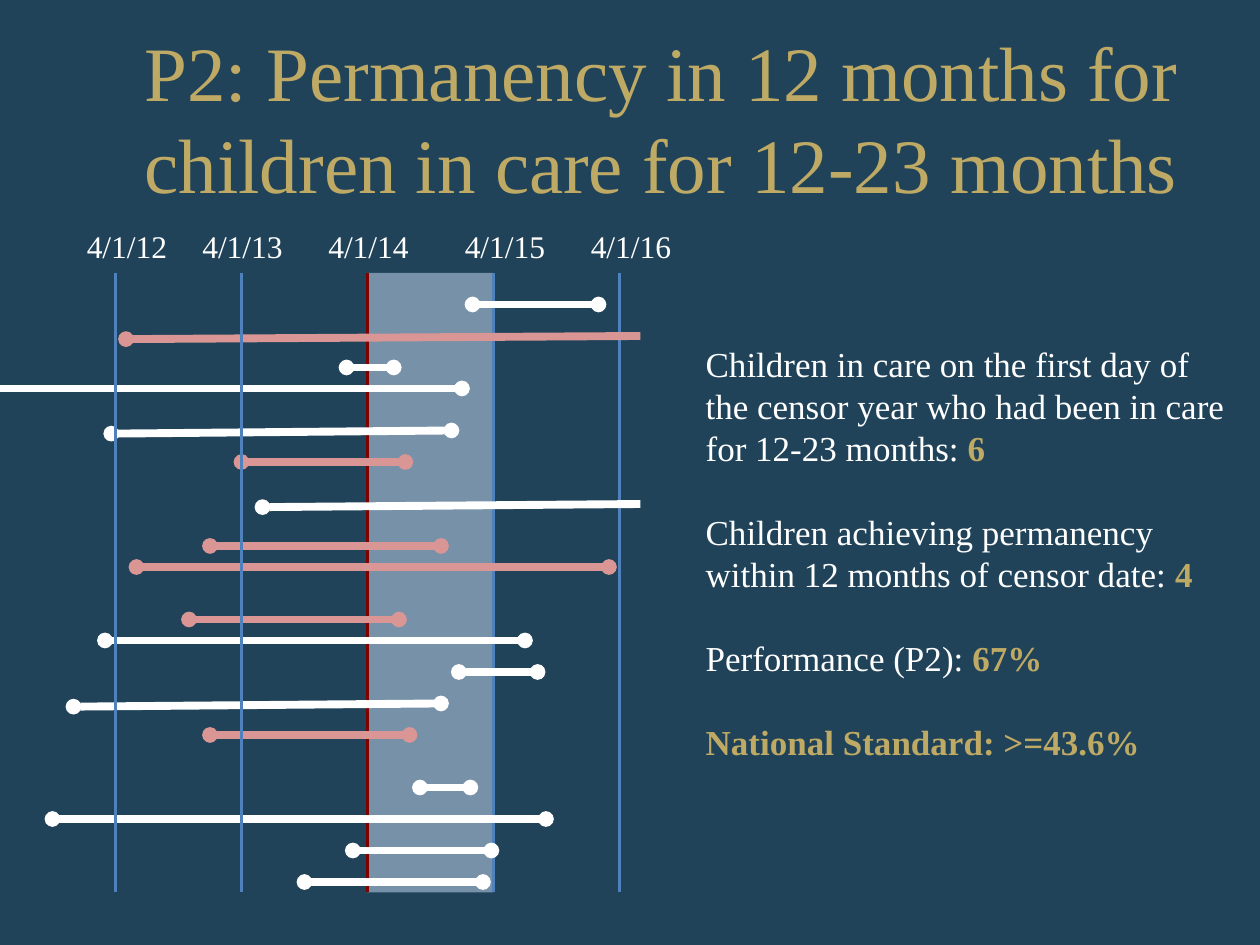
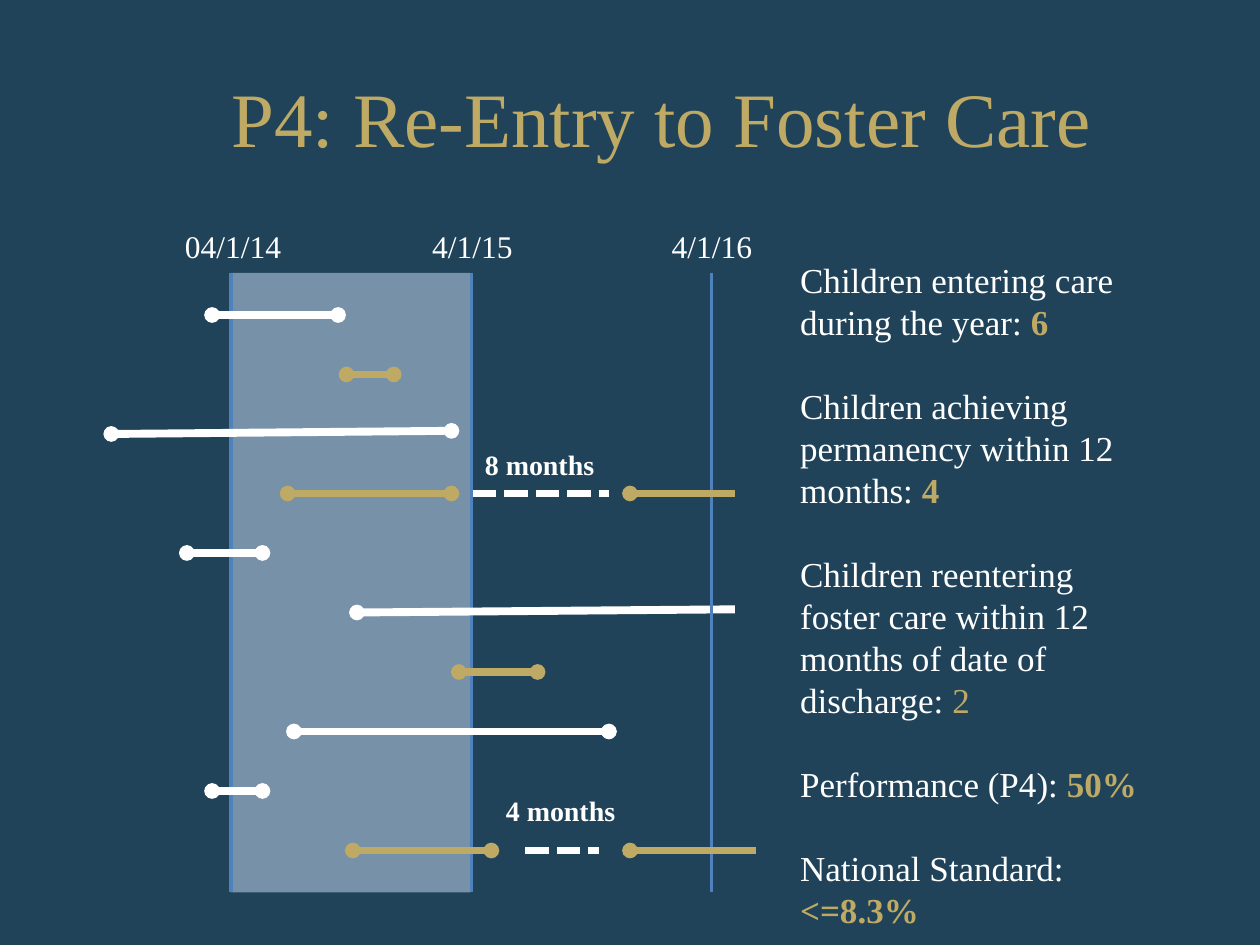
from lxml.etree import SubElement
from pptx import Presentation
from pptx.dml.color import RGBColor
from pptx.enum.dml import MSO_LINE
from pptx.enum.shapes import MSO_CONNECTOR, MSO_SHAPE
from pptx.enum.text import MSO_ANCHOR, MSO_AUTO_SIZE, PP_ALIGN
from pptx.oxml.ns import qn
from pptx.util import Inches, Pt

NAVY = RGBColor(0x20, 0x43, 0x59)
GOLD = RGBColor(0xBE, 0xAA, 0x64)
WHITE = RGBColor(0xFF, 0xFF, 0xFF)
ROSE = RGBColor(0xD9, 0x96, 0x94)
BLUE = RGBColor(0x4F, 0x81, 0xBD)
DARK_RED = RGBColor(0x80, 0x00, 0x00)
PALE_BLUE = RGBColor(0xB9, 0xCD, 0xE5)
FONT = "Times New Roman"

prs = Presentation()
prs.slide_width, prs.slide_height = Inches(10), Inches(7.5)
fill = prs.slide_master.background.fill
fill.solid()
fill.fore_color.rgb = NAVY

# Grid: 120 columns by 90 rows
COL, ROW = prs.slide_width / 120, prs.slide_height / 90
CHART_TOP, CHART_BOTTOM = 26, 85
DATE_WIDTH = 12
BOTH, START, END, NONE = ("headEnd", "tailEnd"), ("headEnd",), ("tailEnd",), ()

# Ten evenly spaced rows for the children of the re-entry slide
child_rows = [30 + i * 51 / 9 for i in range(10)]

SLIDES = [
    {
        "title": "P2: Permanency in 12 months for children in care for 12-23 months",
        "title_span": (6, 108),
        "censor_year": (35, 12),
        # label, label centre, line column, colour, in front of the stays
        "dates": [("4/1/12", 12.1, 11, BLUE, True), ("4/1/13", 23.1, 23, BLUE, True),
                  ("4/1/14", 35.1, 35, DARK_RED, False), ("4/1/15", 48.1, 47, BLUE, False),
                  ("4/1/16", 60.1, 59, BLUE, False)],
        # first column, last column, first row, last row, colour, round ends
        "stays": [
            (45, 57, 29, 29, WHITE, BOTH), (12, 61, 32.3, 32, ROSE, START),
            (33, 37.5, 35, 35, WHITE, BOTH), (0, 44, 37, 37, WHITE, END),
            (10.6, 43, 41.3, 41, WHITE, BOTH), (23, 38.6, 44, 44, ROSE, BOTH),
            (25, 61, 48.3, 48, WHITE, START), (20, 42, 52, 52, ROSE, BOTH),
            (13, 58, 54, 54, ROSE, BOTH), (18, 38, 59, 59, ROSE, BOTH),
            (10, 50, 61, 61, WHITE, BOTH), (43.7, 51.2, 64, 64, WHITE, BOTH),
            (7, 42, 67.3, 67, WHITE, BOTH), (20, 39, 70, 70, ROSE, BOTH),
            (40, 44.8, 75, 75, WHITE, BOTH), (5, 52, 78, 78, WHITE, BOTH),
            (33.6, 46.8, 81, 81, WHITE, BOTH), (29, 46, 84, 84, WHITE, BOTH)],
        "reentries": [],
        "notes_box": (66, 32, 52, 41.6),
        # label, label is highlighted, value, value is bold
        "notes": [
            ("Children in care on the first day of the censor year who had been in care "
             "for 12-23 months: ", False, "6", True),
            ("Children achieving permanency within 12 months of censor date: ",
             False, "4", True),
            ("Performance (P2): ", False, "67%", True),
            ("National Standard: ", True, ">=43.6%", True)],
    },
    {
        "title": "P4: Re-Entry to Foster Care",
        "title_span": (0, 120),
        "censor_year": (22, 22.8),
        "dates": [("04/1/14", 22.2, 22, BLUE, False), ("4/1/15", 45, 44.9, BLUE, False),
                  ("4/1/16", 67.8, 67.75, BLUE, True)],
        "stays": [
            (first, last, row, row - rise, colour, ends)
            for row, (first, last, rise, colour, ends) in zip(child_rows, [
                (20.2, 32.2, 0, WHITE, BOTH), (33, 37.5, 0, GOLD, BOTH),
                (10.6, 43, 0.3, WHITE, BOTH), (27.4, 43, 0, GOLD, BOTH),
                (17.8, 25, 0, WHITE, BOTH), (34, 70, 0.3, WHITE, START),
                (43.7, 51.2, 0, GOLD, BOTH), (28, 58, 0, WHITE, BOTH),
                (20.2, 25, 0, WHITE, BOTH), (33.6, 46.8, 0, GOLD, BOTH)])],
        # time out of care, its label's column and row, gap columns, return columns, row
        "reentries": [("8 months", 45, 42, (45, 58), (60, 70), child_rows[3]),
                      ("4 months", 47, 75, (50, 57), (60, 72), child_rows[9])],
        "notes_box": (75, 24, 34.8, 65.9),
        "notes": [
            ("Children entering care during the year: ", False, "6", True),
            ("Children achieving permanency within 12 months: ", False, "4", True),
            ("Children reentering foster care within 12 months of date of discharge: ",
             False, "2", False),
            ("Performance (P4): ", False, "50%", True),
            ("National Standard: ", False, "<=8.3%", True)],
    },
]


def draw_line(slide, first, last, top, bottom, colour, width=4.5, ends=NONE, dash=None):
    line = slide.shapes.add_connector(
        MSO_CONNECTOR.STRAIGHT, round(first * COL), round(top * ROW),
        round(last * COL), round(bottom * ROW))
    line.line.color.rgb = colour
    line.line.width = Pt(width)
    if dash:
        line.line.dash_style = dash
    properties = line._element.spPr
    for end in ends:
        SubElement(properties.find(qn("a:ln")), qn(f"a:{end}"),
                   type="oval", w="sm", len="sm")
    SubElement(properties, qn("a:effectLst"))


def style_run(run, size, colour, bold=False):
    run.font.name = FONT
    run.font.size = Pt(size)
    run.font.color.rgb = colour
    run.font.bold = bold


for content in SLIDES:
    slide = prs.slides.add_slide(prs.slide_layouts[1])

    # Title
    title = slide.shapes.title
    left, width = content["title_span"]
    title.left, title.top = round(left * COL), round(3.6 * ROW)
    title.width, title.height = round(width * COL), round(15 * ROW)
    title.text_frame.text = content["title"]
    title.text_frame.auto_size = MSO_AUTO_SIZE.NONE
    title.text_frame.vertical_anchor = MSO_ANCHOR.MIDDLE
    title.text_frame.margin_left = Inches(0.6)
    heading = title.text_frame.paragraphs[0]
    heading.alignment = PP_ALIGN.CENTER
    style_run(heading.runs[0], 44, GOLD)

    # Shaded censor year
    left, width = content["censor_year"]
    year = slide.shapes.add_shape(
        MSO_SHAPE.RECTANGLE, round(left * COL), round(CHART_TOP * ROW),
        round(width * COL), round((CHART_BOTTOM - CHART_TOP) * ROW))
    year.shadow.inherit = False
    year.line.fill.background()
    year.fill.solid()
    year.fill.fore_color.rgb = PALE_BLUE
    tint = year._element.spPr.find(qn("a:solidFill"))[0]
    SubElement(tint, qn("a:alpha"), val="57000")

    # Date labels
    for label, centre, *_ in content["dates"]:
        date = slide.shapes.add_textbox(
            round((centre - DATE_WIDTH / 2) * COL), round(21 * ROW),
            round(DATE_WIDTH * COL), round(4.8 * ROW))
        date.text_frame.word_wrap = False
        date.text_frame.text = label
        date.text_frame.paragraphs[0].alignment = PP_ALIGN.CENTER
        style_run(date.text_frame.paragraphs[0].runs[0], 18, WHITE)

    # Date lines behind the stays, the stays, then date lines in front
    for in_front in (False, True):
        for _, _, column, colour, front in content["dates"]:
            if front == in_front:
                draw_line(slide, column, column, CHART_TOP, CHART_BOTTOM, colour, width=2)
        if not in_front:
            for stay in content["stays"]:
                *place, colour, ends = stay
                draw_line(slide, *place, colour, ends=ends)

    # Returns to care and the gap before each
    for label, column, label_row, gap, stay, row in content["reentries"]:
        draw_line(slide, *stay, row, row, GOLD, ends=START)
        draw_line(slide, *gap, row, row, WHITE, dash=MSO_LINE.SQUARE_DOT)
        months = slide.shapes.add_textbox(
            round(column * COL), round(label_row * ROW), round(13 * COL), round(4.4 * ROW))
        months.text_frame.word_wrap = True
        months.text_frame.text = label
        style_run(months.text_frame.paragraphs[0].runs[0], 16, WHITE, bold=True)

    # Notes beside the timeline
    notes = slide.placeholders[1]
    left, top, width, height = content["notes_box"]
    notes.left, notes.top = round(left * COL), round(top * ROW)
    notes.width, notes.height = round(width * COL), round(height * ROW)
    frame = notes.text_frame
    frame.auto_size = MSO_AUTO_SIZE.NONE
    frame.vertical_anchor = MSO_ANCHOR.TOP
    for i, (label, highlighted, value, bold) in enumerate(content["notes"]):
        note = frame.add_paragraph() if i else frame.paragraphs[0]
        note.space_before = Pt(24 if i else 0)
        properties = note._p.get_or_add_pPr()
        properties.set("marL", "0")
        properties.set("indent", "0")
        SubElement(properties, qn("a:buNone"))
        for text in (label, value):
            note.add_run().text = text
        style_run(note.runs[0], 20, GOLD if highlighted else WHITE, bold=highlighted)
        style_run(note.runs[1], 20, GOLD, bold=bold)

prs.save("out.pptx")
